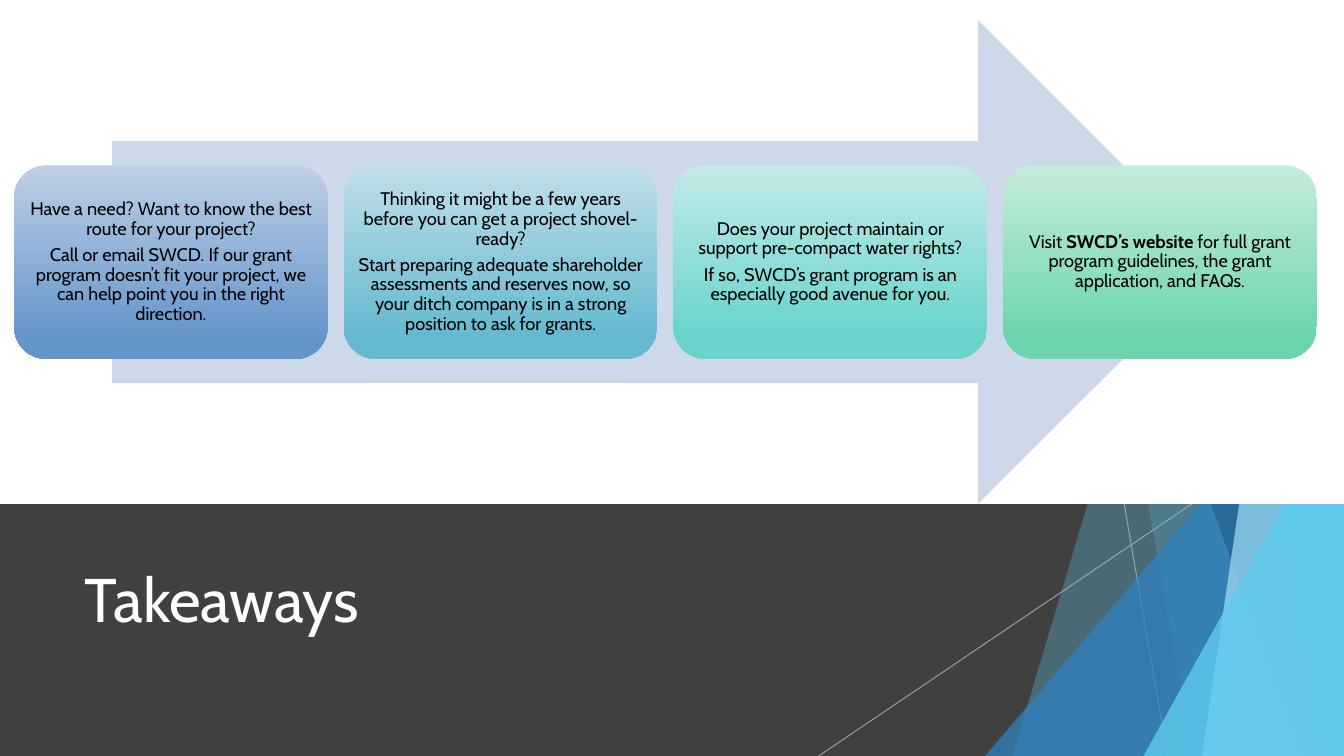
from collections import namedtuple

from lxml.etree import SubElement
from pptx import Presentation
from pptx.dml.color import RGBColor
from pptx.enum.shapes import MSO_CONNECTOR, MSO_SHAPE
from pptx.enum.text import MSO_ANCHOR, PP_ALIGN
from pptx.oxml.ns import qn
from pptx.util import Inches, Pt

Box = namedtuple("Box", "left top width height")

SLIDE = Box(0, 0, 13.33, 7.5)
STEPS_PANEL = Box(0, 0, 13.33, 5)
TITLE_BAND = Box(0, 5, 13.33, 2.5)

FONT = "Cabin"
COLORS = {
    "white": "FFFFFF", "black": "000000", "band": "404040", "ray": "BFBFBF",
    "arrow": "CDD9E9", "sky": "5FCBEF", "pale": "9FE0F5", "blue": "2E83C3",
    "navy": "226292",
}
STEP_GRADIENTS = [("BFCFE5", "6596CA"), ("C1DFE9", "65BAD1"),
                  ("C3EBE7", "68D4CB"), ("C5ECDB", "6DD5AE")]

# Each step holds paragraphs; each paragraph holds (words, bold) runs.
STEPS = [
    [[("Have a need? Want to know the best route for your project?", False)],
     [("Call or email SWCD. If our grant program doesn’t fit your project, "
       "we can help point you in the right direction.", False)]],
    [[("Thinking it might be a few years before you can get a project "
       "shovel-ready?", False)],
     [("Start preparing adequate shareholder assessments and reserves now, so "
       "your ditch company is in a strong position to ask for grants.", False)]],
    [[("Does your project maintain or support pre-compact water rights?", False)],
     [("If so, SWCD’s grant program is an especially good avenue for you.", False)]],
    [[("Visit ", False), ("SWCD’s website", True),
      (" for full grant program guidelines, the grant application, and FAQs.",
       False)]],
]

STEP_FRAME = {
    "word_wrap": True, "vertical_anchor": MSO_ANCHOR.MIDDLE,
    "margin_left": Inches(0.05), "margin_right": Inches(0.05),
    "margin_top": Inches(0.05), "margin_bottom": Inches(0.05),
}
STEP_PARAGRAPH = {"alignment": PP_ALIGN.CENTER, "line_spacing": 0.9,
                  "space_after": Pt(4.55)}
TITLE_FRAME = {"word_wrap": True, "vertical_anchor": MSO_ANCHOR.MIDDLE}


def apply_format(target, values):
    for name, value in values.items():
        setattr(target, name, value)


def rgb(name):
    return RGBColor.from_string(COLORS[name])


def set_alpha(element, percent):
    """Make the colour inside the element partly transparent."""
    for color in element.iter(qn("a:srgbClr")):
        SubElement(color, qn("a:alpha"), val=str(percent * 1000))


def paint(shape, color, alpha=100):
    shape.shadow.inherit = False
    shape.line.fill.background()
    shape.fill.solid()
    shape.fill.fore_color.rgb = rgb(color)
    if alpha < 100:
        set_alpha(shape.fill._xPr, alpha)


def add_preset(slide, kind, box):
    return slide.shapes.add_shape(kind, *map(Inches, box))


def add_run(paragraph, words, size, color, bold=False):
    run = paragraph.add_run()
    run.text = words
    apply_format(run.font, {"name": FONT, "size": Pt(size), "bold": bold})
    run.font.color.rgb = rgb(color)


def add_ray(slide, box, top_x, bottom_x):
    """Draw a thin light line from the top to the bottom of the box."""
    ray = slide.shapes.add_connector(
        MSO_CONNECTOR.STRAIGHT,
        Inches(box.left + top_x), Inches(box.top),
        Inches(box.left + bottom_x), Inches(box.top + box.height))
    ray.line.width = Pt(0.75)
    ray.line.color.rgb = rgb("ray")
    properties = ray._element.spPr
    set_alpha(properties, 70)
    SubElement(properties, qn("a:effectLst"))


def add_facet(slide, box, top_x, bottom_x, color, alpha):
    """Fill the box to the right of a slanted edge."""
    right, bottom = box.left + box.width, box.top + box.height
    corners = [(right, box.top), (right, bottom), (box.left + bottom_x, bottom)]
    outline = slide.shapes.build_freeform(
        Inches(box.left + top_x), Inches(box.top))
    outline.add_line_segments([(Inches(x), Inches(y)) for x, y in corners])
    paint(outline.convert_to_shape(), color, alpha)


def add_corner(slide, box, width, height, color, alpha):
    """Put a right-angled triangle in the lower right corner of the box."""
    corner = add_preset(
        slide, MSO_SHAPE.ISOSCELES_TRIANGLE,
        Box(box.left + box.width - width, box.top + box.height - height,
            width, height))
    corner.adjustments[0] = 1
    paint(corner, color, alpha)


def add_facets(slide, box):
    add_facet(slide, box, 12.28, 10.04, "sky", 30)
    add_facet(slide, box, 10.5, 11.83, "sky", 20)
    add_corner(slide, box, 3.56, 4.17, "blue", 72)
    add_facet(slide, box, 10.21, 12.91, "navy", 70)
    add_facet(slide, box, 13.03, 11.92, "pale", 70)
    add_facet(slide, box, 11.96, 13.18, "sky", 65)
    add_corner(slide, box, 1.99, 3.57, "sky", 80)


def add_title_band(slide, box):
    paint(add_preset(slide, MSO_SHAPE.RECTANGLE, box), "band")
    add_ray(slide, box, 11.15, 11.58)
    add_ray(slide, box, 11.82, 8.12)
    add_facets(slide, SLIDE)
    title = slide.shapes.add_textbox(*map(Inches, (
        box.left + 0.74, box.top + 0.21, 9.4, 1.44))).text_frame
    apply_format(title, TITLE_FRAME)
    add_run(title.paragraphs[0], "Takeaways", 44, "white")


def add_step(slide, box, paragraphs, gradient):
    step = add_preset(slide, MSO_SHAPE.ROUNDED_RECTANGLE, box)
    step.shadow.inherit = False
    step.line.fill.background()
    step.fill.gradient()
    step.fill.gradient_angle = 270
    for stop, position, color in zip(step.fill.gradient_stops, (0, 0.88), gradient):
        stop.position = position
        stop.color.rgb = RGBColor.from_string(color)
    frame = step.text_frame
    apply_format(frame, STEP_FRAME)
    for index, runs in enumerate(paragraphs):
        paragraph = frame.add_paragraph() if index else frame.paragraphs[0]
        apply_format(paragraph, STEP_PARAGRAPH)
        for words, bold in runs:
            add_run(paragraph, words, 13, "black", bold)


def add_steps_panel(slide, box):
    paint(add_preset(slide, MSO_SHAPE.RECTANGLE, box), "white")
    arrow = Box(box.left + 1.11, box.top + 0.2, 10.99, box.height - 0.2)
    paint(add_preset(slide, MSO_SHAPE.RIGHT_ARROW, arrow), "arrow")
    width, height, pitch = 3.11, 1.92, 3.27
    top = arrow.top + (arrow.height - height) / 2
    for index, (paragraphs, gradient) in enumerate(zip(STEPS, STEP_GRADIENTS)):
        left = box.left + 0.14 + index * pitch
        add_step(slide, Box(left, top, width, height), paragraphs, gradient)


def main():
    deck = Presentation()
    deck.slide_width = Inches(SLIDE.width)
    deck.slide_height = Inches(SLIDE.height)
    slide = deck.slides.add_slide(deck.slide_layouts[6])
    add_title_band(slide, TITLE_BAND)
    add_steps_panel(slide, STEPS_PANEL)
    deck.save("out.pptx")


if __name__ == "__main__":
    main()
